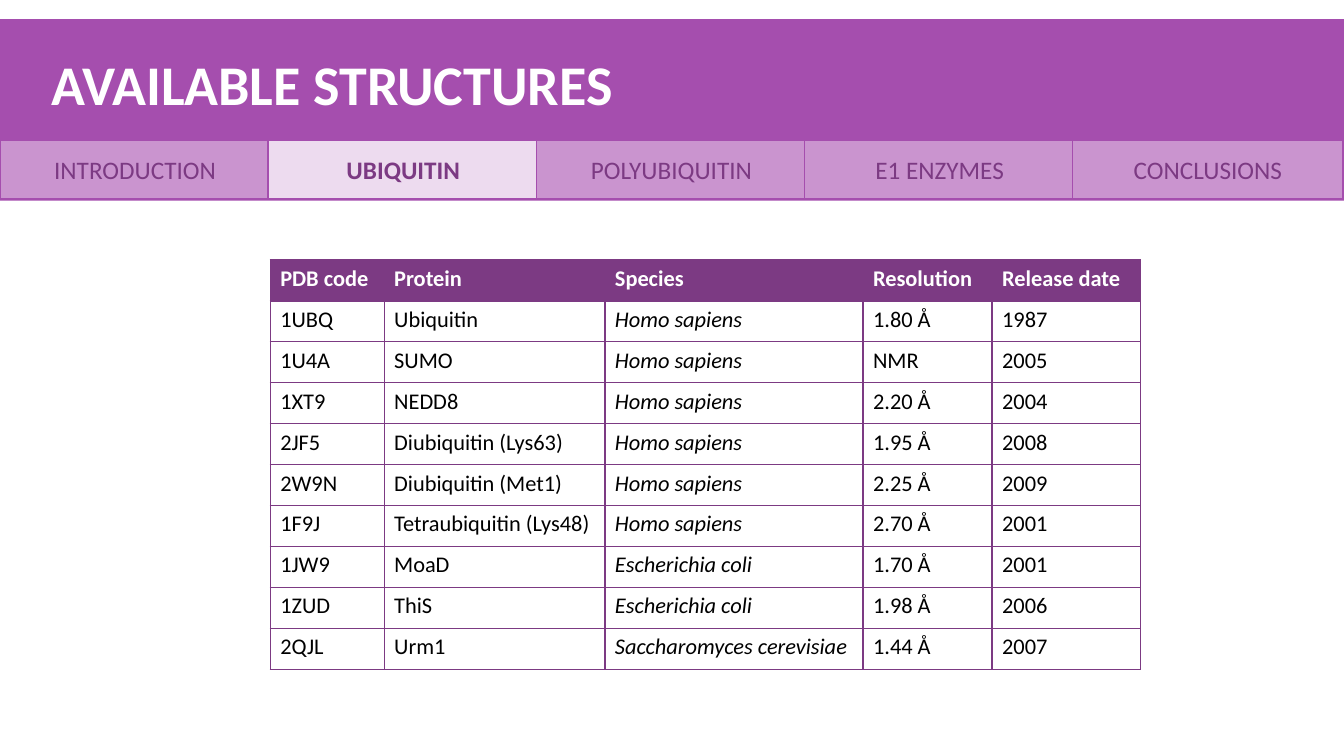
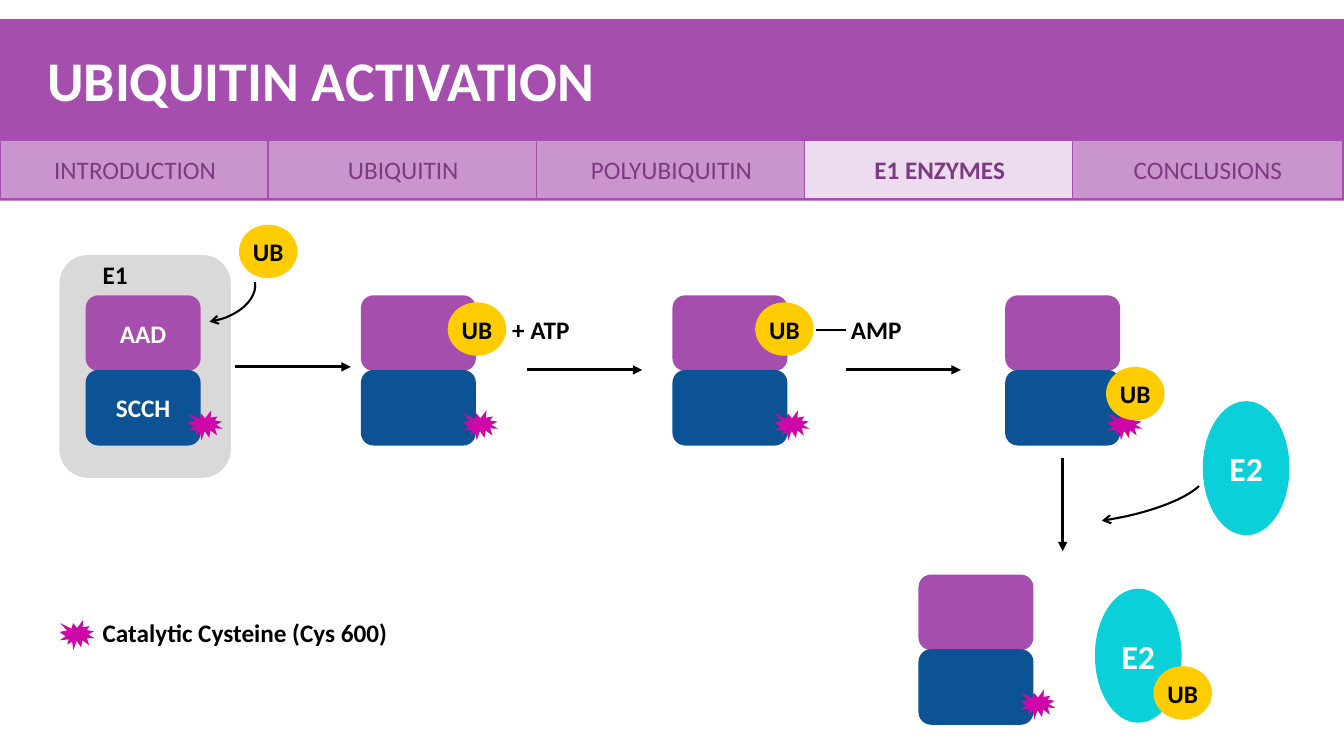
"""Build two ubiquitin slides: a table of structures and the activation pathway."""
from lxml.etree import SubElement
from pptx import Presentation
from pptx.dml.color import RGBColor
from pptx.enum.shapes import MSO_CONNECTOR as Link, MSO_SHAPE as Form
from pptx.enum.text import MSO_ANCHOR as Anchor, PP_ALIGN as Align
from pptx.oxml import parse_xml
from pptx.oxml.ns import nsdecls, qn
from pptx.util import Inches, Pt

WIDTH, HEIGHT = 13.33, 7.5
FONT = "Calibri"
WHITE = RGBColor(0xFF, 0xFF, 0xFF)
BLACK = RGBColor(0x00, 0x00, 0x00)
PURPLE = RGBColor(0xA5, 0x4E, 0xAE)
DARK_PURPLE = RGBColor(0x7C, 0x3A, 0x83)
TAB_PURPLE = RGBColor(0xCA, 0x94, 0xCF)
PALE_PURPLE = RGBColor(0xED, 0xDB, 0xEF)
GREY = RGBColor(0xD9, 0xD9, 0xD9)
BLUE = RGBColor(0x0B, 0x53, 0x94)
YELLOW = RGBColor(0xFF, 0xCC, 0x00)
MAGENTA = RGBColor(0xCF, 0x07, 0xA9)
CYAN = RGBColor(0x0B, 0xD0, 0xD9)

SECTIONS = ["INTRODUCTION", "UBIQUITIN", "POLYUBIQUITIN", "E1 ENZYMES", "CONCLUSIONS"]
TAB_TOP, TAB_PITCH, TAB_SIZE = 1.39, 2.66, (2.68, 0.58)

TABLE_LEFT, TABLE_TOP, ROW_HEIGHT = 2.68, 2.58, 0.406
COLUMNS = [("PDB code", 1.13), ("Protein", 2.19), ("Species", 2.56),
           ("Resolution", 1.28), ("Release date", 1.47)]
STRUCTURES = [
    ("1UBQ", "Ubiquitin", "Homo sapiens", "1.80 Å", "1987"),
    ("1U4A", "SUMO", "Homo sapiens", "NMR", "2005"),
    ("1XT9", "NEDD8", "Homo sapiens", "2.20 Å", "2004"),
    ("2JF5", "Diubiquitin (Lys63)", "Homo sapiens", "1.95 Å", "2008"),
    ("2W9N", "Diubiquitin (Met1)", "Homo sapiens", "2.25 Å", "2009"),
    ("1F9J", "Tetraubiquitin (Lys48)", "Homo sapiens", "2.70 Å", "2001"),
    ("1JW9", "MoaD", "Escherichia coli", "1.70 Å", "2001"),
    ("1ZUD", "ThiS", "Escherichia coli", "1.98 Å", "2006"),
    ("2QJL", "Urm1", "Saccharomyces cerevisiae", "1.44 Å", "2007"),
]

DOMAIN_SIZE, DOMAIN_PITCH = (1.14, 0.75), 0.74
STAR_SIZE, STAR_OFFSET = (0.35, 0.3), (1.01, 1.14)
UB_SIZE, E2_SIZE = (0.58, 0.53), (0.86, 1.33)
E1_STAGES = [(0.85, 2.93, "AAD", "SCCH"), (3.58, 2.93, "", ""), (6.67, 2.93, "", ""),
             (9.97, 2.93, "", ""), (9.11, 5.7, "", "")]
E2_PLACES = [(11.93, 3.98), (10.86, 5.84)]
UB_PLACES = [(2.37, 2.23), (4.44, 3), (7.49, 3), (10.97, 3.64), (11.44, 6.61)]
LABELS = [("E1", 0.92, 2.52, 0.47), ("+ ATP", 4.98, 3.07, 0.82), ("AMP", 8.34, 3.07, 0.71),
          ("Catalytic Cysteine (Cys 600)", 0.92, 6.08, 3.17)]
STEPS = [(2.33, 3.64, 3.48, 3.64), (5.23, 3.67, 6.37, 3.67),
         (8.39, 3.67, 9.53, 3.67), (10.54, 4.54, 10.54, 5.47)]
AMP_BOND = (8.09, 3.27, 8.39, 3.27)
ENTRY_ARCS = [((1.71, 2.37), (0.64, 1.01), 162), ((10.56, 3.76), (0.64, 2.18), 166.2)]
ARC_TURN = 81.4


def inches(*lengths):
    return [Inches(length) for length in lengths]


def write(frame, text, size, color, bold=False, italic=False, align=Align.LEFT):
    frame.text = text
    line = frame.paragraphs[0]
    line.alignment = align
    for run in line.runs:
        font = run.font
        font.name, font.size, font.bold, font.italic = FONT, Pt(size), bold, italic
        font.color.rgb = color
    return line


def draw(slide, form, place, size, fill=None, outline=None, weight=1):
    figure = slide.shapes.add_shape(form, *inches(*place, *size))
    figure.shadow.inherit = False
    if fill is None:
        figure.fill.background()
    else:
        figure.fill.solid()
        figure.fill.fore_color.rgb = fill
    if outline is None:
        figure.line.fill.background()
    else:
        figure.line.color.rgb = outline
        figure.line.width = Pt(weight)
    return figure


def caption(figure, text, color, size=18, bold=True, inset=None):
    frame = figure.text_frame
    frame.vertical_anchor = Anchor.MIDDLE
    if inset is not None:
        frame.margin_left = frame.margin_right = frame.margin_top = frame.margin_bottom = inset
    write(frame, text, size, color, bold, align=Align.CENTER)


def point(figure, head):
    outline = figure.element.spPr.find(qn("a:ln"))
    SubElement(outline, qn("a:tailEnd"), type=head)


def connect(slide, ends, weight, head=None):
    link = slide.shapes.add_connector(Link.STRAIGHT, *inches(*ends))
    link.line.color.rgb = BLACK
    link.line.width = Pt(weight)
    SubElement(link.element.spPr, qn("a:effectLst"))
    if head:
        point(link, head)


def add_section_slide(deck, title, title_box, current):
    slide = deck.slides.add_slide(deck.slide_layouts[6])
    draw(slide, Form.RECTANGLE, (0, 0.19), (WIDTH, 1.8), PURPLE)
    for index, section in enumerate(SECTIONS):
        active = section == current
        tab = draw(slide, Form.RECTANGLE, (index * TAB_PITCH, TAB_TOP), TAB_SIZE,
                   PALE_PURPLE if active else TAB_PURPLE, PURPLE)
        caption(tab, section, DARK_PURPLE, bold=active)
    frame = slide.shapes.add_textbox(*inches(*title_box)).text_frame
    frame.word_wrap = True
    frame.vertical_anchor = Anchor.MIDDLE
    write(frame, title, 40, WHITE, bold=True).line_spacing = 0.85
    return slide


def border(cell):
    properties = cell._tc.get_or_add_tcPr()
    for index, side in enumerate("LRTB"):
        properties.insert(index, parse_xml(
            f'<a:ln{side} {nsdecls("a")} w="{Pt(1)}"><a:solidFill>'
            f'<a:srgbClr val="{DARK_PURPLE}"/></a:solidFill></a:ln{side}>'))


def add_structures(slide):
    headings, widths = zip(*COLUMNS)
    rows = [headings, *STRUCTURES]
    table = slide.shapes.add_table(len(rows), len(headings), *inches(
        TABLE_LEFT, TABLE_TOP, sum(widths), ROW_HEIGHT * len(rows))).table
    table.first_row = table.horz_banding = False
    for column, width in zip(table.columns, widths):
        column.width = Inches(width)
    for r, values in enumerate(rows):
        for c, value in enumerate(values):
            cell, heading = table.cell(r, c), r == 0
            cell.fill.solid()
            cell.fill.fore_color.rgb = DARK_PURPLE if heading else WHITE
            border(cell)
            write(cell.text_frame, value, 16, WHITE if heading else BLACK, heading,
                  italic=not heading and headings[c] == "Species")


def add_star(slide, place):
    draw(slide, Form.EXPLOSION1, place, STAR_SIZE, MAGENTA)


def add_e1(slide, left, top, adenylation, catalytic):
    for row, (name, fill) in enumerate([(adenylation, PURPLE), (catalytic, BLUE)]):
        domain = draw(slide, Form.ROUNDED_RECTANGLE, (left, top + row * DOMAIN_PITCH),
                      DOMAIN_SIZE, fill)
        if name:
            caption(domain, name, WHITE)
    add_star(slide, (left + STAR_OFFSET[0], top + STAR_OFFSET[1]))


def add_pathway(slide):
    draw(slide, Form.ROUNDED_RECTANGLE, (0.59, 2.53), (1.7, 2.21), GREY)
    for stage in E1_STAGES:
        add_e1(slide, *stage)
    add_star(slide, (0.59, 6.15))
    for place in E2_PLACES:
        caption(draw(slide, Form.OVAL, place, E2_SIZE, CYAN), "E2", WHITE, size=24)
    for place in UB_PLACES:
        caption(draw(slide, Form.OVAL, place, UB_SIZE, YELLOW), "UB", BLACK, inset=0)
    for text, left, top, width in LABELS:
        frame = slide.shapes.add_textbox(*inches(left, top, width, 0.4)).text_frame
        frame.word_wrap = False
        write(frame, text, 18, BLACK, bold=True)
    for ends in STEPS:
        connect(slide, ends, 2.25, "triangle")
    connect(slide, AMP_BOND, 1.5)
    for place, size, start in ENTRY_ARCS:
        entry = draw(slide, Form.ARC, place, size, outline=BLACK, weight=1.5)
        entry.adjustments[0], entry.adjustments[1] = start, 0
        entry.rotation = ARC_TURN
        point(entry, "arrow")


def main():
    deck = Presentation()
    deck.slide_width, deck.slide_height = inches(WIDTH, HEIGHT)
    add_structures(add_section_slide(
        deck, "AVAILABLE STRUCTURES", (0.41, 0.41, 10.56, 0.94), "UBIQUITIN"))
    add_pathway(add_section_slide(
        deck, "UBIQUITIN ACTIVATION", (0.37, 0.2, 10.7, 1.28), "E1 ENZYMES"))
    deck.save("out.pptx")


if __name__ == "__main__":
    main()
